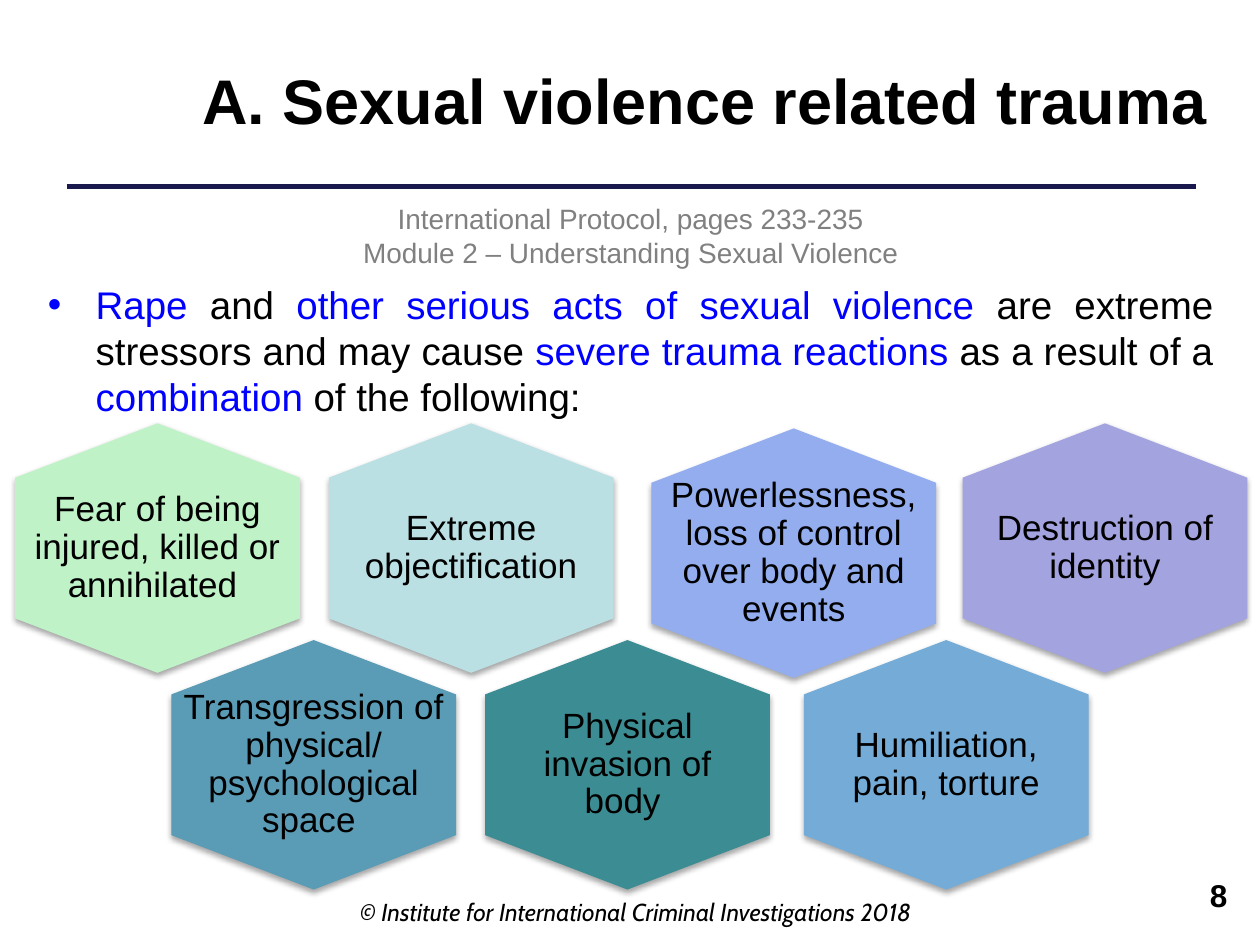
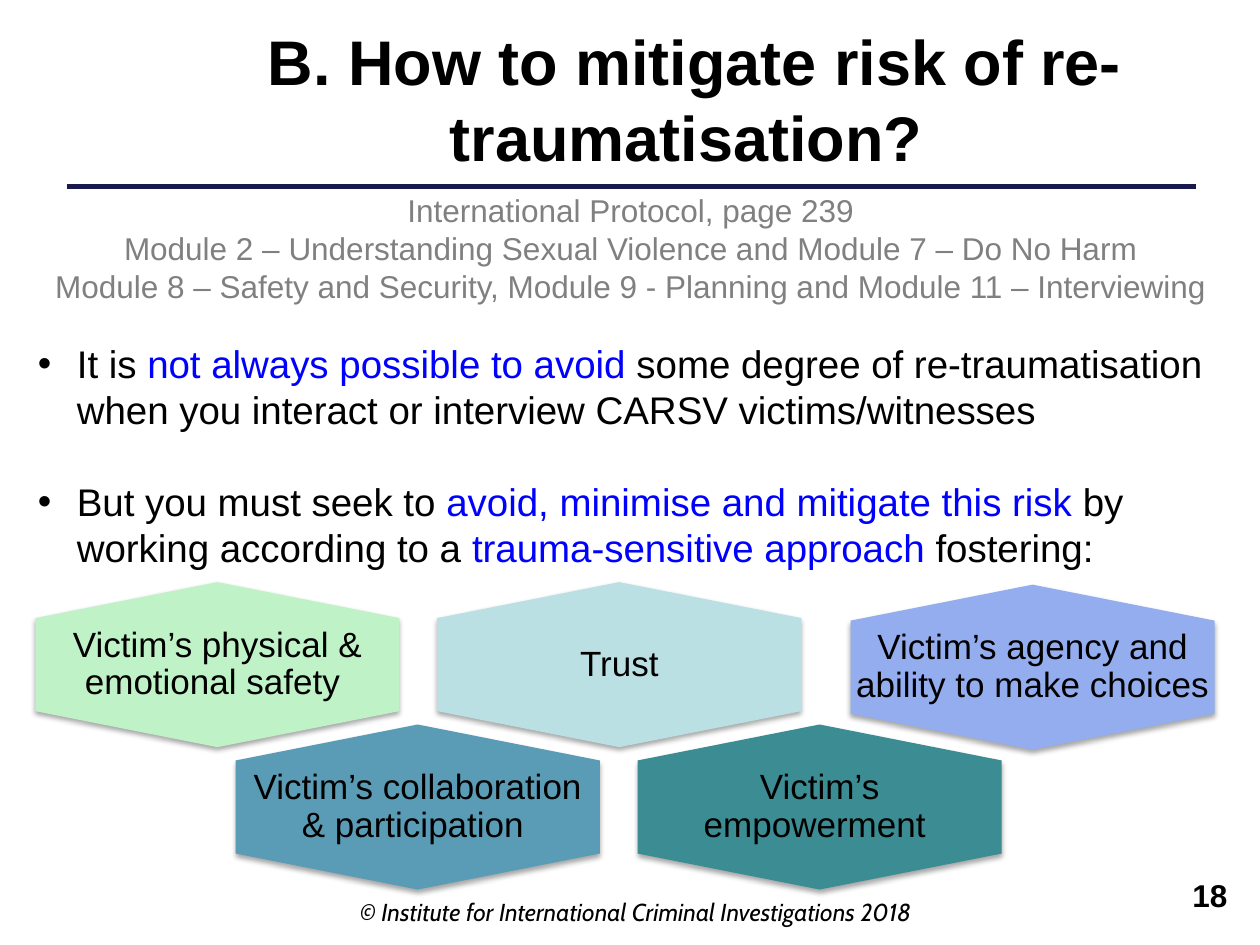
import lxml.etree
import pptx
import pptx.dml.color
import pptx.enum.shapes
import pptx.enum.text
import pptx.oxml.ns
import pptx.util

Inches = pptx.util.Inches
ALIGN = pptx.enum.text.PP_ALIGN
ANCHOR = pptx.enum.text.MSO_ANCHOR

COLORS = {
    "ink": "000000", "key": "0000FF", "note": "808080", "rule": "19194D",
    "mint": "C0F2C7", "ice": "BBE0E3", "iris": "93ADEF", "lilac": "A3A3E0",
    "steel": "5A9BB5", "teal": "3C8C93", "sky": "74ACD7",
}
# Side margin of the text in a cell of each colour, in inches
SIDES = {"mint": 0, "iris": 0, "ice": 0.16, "teal": 0.16,
         "steel": 0.08, "lilac": 0.08, "sky": 0.08}
FOOTER = "© Institute for International Criminal Investigations 2018"
SHOULDER = 0.218


def rgb(name):
    return pptx.dml.color.RGBColor.from_string(COLORS[name])


def add_node(parent, tag, **attrs):
    return lxml.etree.SubElement(parent, pptx.oxml.ns.qn(tag), attrs)


def write(shape, lines, size, color="ink", font="Arial", bold=False, italic=False,
          align=ALIGN.CENTER, anchor=ANCHOR.TOP, spacing=None, gap=0, indent=0,
          margins=(0.1, 0.05)):
    """Fill a shape with one paragraph per line; words between asterisks take the key colour."""
    frame = shape.text_frame
    frame.word_wrap = True
    frame.auto_size = pptx.enum.text.MSO_AUTO_SIZE.NONE
    frame.vertical_anchor = anchor
    frame.margin_left = frame.margin_right = Inches(margins[0])
    frame.margin_top = frame.margin_bottom = Inches(margins[1])
    for row, line in enumerate(lines):
        para = frame.add_paragraph() if row else frame.paragraphs[0]
        para.alignment = align
        para.space_before = pptx.util.Pt(gap if row else 0)
        if spacing:
            para.line_spacing = spacing
        if indent:
            props = para._p.get_or_add_pPr()
            props.set("marL", str(Inches(indent)))
            props.set("indent", str(-Inches(indent)))
        for part, words in enumerate(line.split("*")):
            if words:
                run = para.add_run()
                run.text = words
                run.font.name = font
                run.font.size = pptx.util.Pt(size)
                run.font.bold = bold
                run.font.italic = italic
                run.font.color.rgb = rgb("key" if part % 2 else color)


def move(shape, box):
    shape.left, shape.top, shape.width, shape.height = map(Inches, box)


def add_label(slide, box, lines, size, **style):
    write(slide.shapes.add_textbox(*map(Inches, box)), lines, size, **style)


def add_rule(slide):
    line = slide.shapes.add_connector(
        pptx.enum.shapes.MSO_CONNECTOR.STRAIGHT,
        Inches(0.53), Inches(1.48), Inches(9.49), Inches(1.48))
    line.line.color.rgb = rgb("rule")
    line.line.width = pptx.util.Pt(2.5)
    add_node(line._element.spPr, "a:effectLst")


def add_shadow(shape):
    effects = add_node(shape._element.spPr, "a:effectLst")
    shadow = add_node(effects, "a:outerShdw", blurRad="40000", dist="23000",
                      dir="5400000", rotWithShape="0")
    tint = add_node(shadow, "a:srgbClr", val=COLORS["ink"])
    add_node(tint, "a:alpha", val="35000")


def add_cell(slide, box, text, color):
    """Draw a hexagon with its points at the top and bottom of the box."""
    left, top, width, height = box
    right, middle = left + width, left + width / 2
    upper, lower = top + height * SHOULDER, top + height * (1 - SHOULDER)
    points = [(middle, top), (right, upper), (right, lower),
              (middle, top + height), (left, lower), (left, upper)]
    points = [(Inches(x), Inches(y)) for x, y in points]
    outline = slide.shapes.build_freeform(*points[0])
    outline.add_line_segments(points[1:], close=True)
    cell = outline.convert_to_shape()
    cell.fill.solid()
    cell.fill.fore_color.rgb = rgb(color)
    cell.line.fill.background()
    add_shadow(cell)
    write(cell, [text], 20, anchor=ANCHOR.MIDDLE, spacing=0.9,
          margins=(SIDES[color], 0.26))


def add_comb(slide, size, cells):
    for left, top, color, text in cells:
        add_cell(slide, (left, top, *size), text, color)


def add_page(deck, number, title, title_box, body, body_box, **style):
    slide = deck.slides.add_slide(deck.slide_layouts[1])
    add_rule(slide)
    head, main = slide.placeholders
    move(head, title_box)
    write(head, [title], 36, bold=True)
    move(main, body_box)
    write(main, body, 22, gap=26, **style)
    add_label(slide, (2.72, 7.07, 4.65, 0.35), [FOOTER], 14, font="Cabin", italic=True)
    add_label(slide, (7.28, 6.9, 2.56, 0.52), [str(number)], 18, bold=True,
              align=ALIGN.RIGHT)
    return slide


def add_trauma(deck):
    slide = add_page(
        deck, 8, "A. Sexual violence related trauma", (1.46, 0.44, 8.27, 0.71),
        ["*Rape* and *other serious acts of sexual violence* are extreme stressors "
         "and may cause *severe trauma reactions* as a result of a *combination* "
         "of the following:"],
        (0.28, 2.18, 9.45, 1.95), indent=0.38, align=ALIGN.JUSTIFY)
    add_label(slide, (0.28, 1.55, 9.45, 0.64),
              ["International Protocol, pages 233-235",
               "Module 2 – Understanding Sexual Violence"], 16, color="note")
    add_comb(slide, (2.26, 1.98), [
        (0.12, 3.36, "mint", "Fear of being injured, killed or annihilated "),
        (2.61, 3.36, "ice", "Extreme objectification"),
        (5.17, 3.4, "iris", "Powerlessness, loss of control over body and events"),
        (7.64, 3.36, "lilac", "Destruction of identity"),
        (1.36, 5.08, "steel", "Transgression of physical/ psychological space "),
        (3.85, 5.08, "teal", "Physical invasion of body "),
        (6.38, 5.08, "sky", "Humiliation, pain, torture"),
    ])


def add_risk(deck):
    slide = add_page(
        deck, 18, "B. How to mitigate risk of re-traumatisation? ",
        (1.38, 0.13, 8.27, 1.31),
        ["It is *not always possible to avoid* some degree of re-traumatisation "
         "when you interact or interview CARSV victims/witnesses",
         "But you must seek to *avoid, minimise and mitigate this risk* by working "
         "according to a *trauma-sensitive approach* fostering:"],
        (0.2, 2.65, 9.53, 1.95), indent=0.31, align=ALIGN.LEFT)
    add_label(slide, (0.28, 1.47, 9.45, 1.01),
              ["International Protocol, page 239",
               "Module 2 – Understanding Sexual Violence and Module 7 – Do No Harm",
               "Module 8 – Safety and Security, Module 9 - Planning and "
               "Module 11 – Interviewing"], 18, color="note")
    add_comb(slide, (2.89, 1.31), [
        (0.28, 4.62, "mint", "Victim’s physical & emotional safety "),
        (3.47, 4.62, "ice", "Trust"),
        (6.75, 4.64, "iris", "Victim’s agency and ability to make choices"),
        (1.87, 5.75, "steel", "Victim’s collaboration & participation "),
        (5.06, 5.75, "teal", "Victim’s empowerment "),
    ])


def main():
    deck = pptx.Presentation()
    deck.slide_width, deck.slide_height = Inches(10), Inches(7.5)
    add_trauma(deck)
    add_risk(deck)
    deck.save("out.pptx")


if __name__ == "__main__":
    main()
